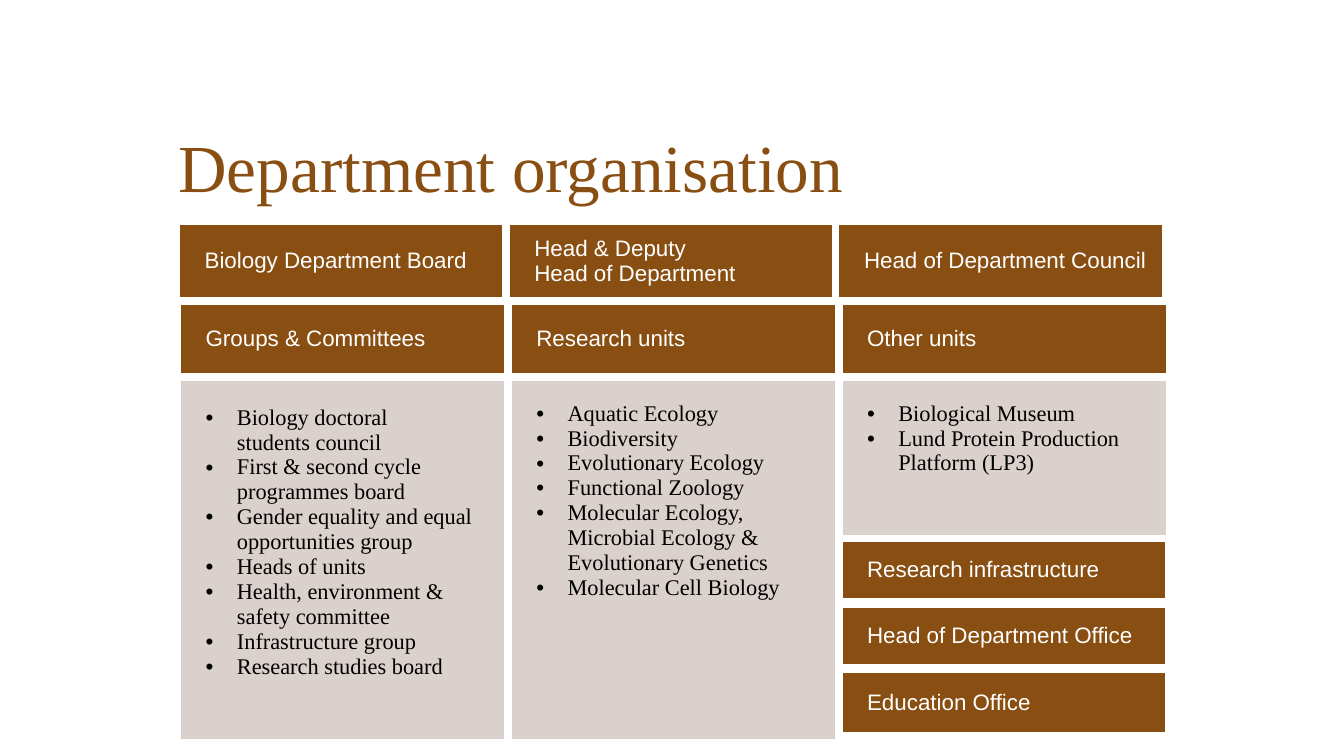
from lxml import etree
from pptx import Presentation
from pptx.dml.color import RGBColor
from pptx.enum import text
from pptx.oxml import ns
from pptx.util import Inches, Pt

BROWN = RGBColor(0x89, 0x4E, 0x11)
BEIGE = RGBColor(0xDA, 0xD0, 0xCC)
WHITE = RGBColor(0xFF, 0xFF, 0xFF)
BLACK = RGBColor(0x00, 0x00, 0x00)
SANS, SERIF = "Arial", "Times New Roman"

LEADERSHIP = ["Biology Department Board", "Head & Deputy \nHead of Department",
              "Head of Department Council"]
UNIT_HEADINGS = ["Groups & Committees", "Research units", "Other units"]
UNIT_LISTS = [
    ["Biology doctoral \nstudents council", "First & second cycle programmes board",
     "Gender equality and equal opportunities group", "Heads of units",
     "Health, environment & safety committee", "Infrastructure group",
     "Research studies board"],
    ["Aquatic Ecology", "Biodiversity", "Evolutionary Ecology", "Functional Zoology",
     "Molecular Ecology, Microbial Ecology & Evolutionary Genetics",
     "Molecular Cell Biology"],
    ["Biological Museum", "Lund Protein Production Platform (LP3)"],
]
LIST_TOP_MARGINS = [0.28, 0.24, 0.24]
OFFICES = [("Research infrastructure", 5.34, 0.63),
           ("Head of Department Office", 5.99, 0.63),
           ("Education Office", 6.64, 0.66)]


def add_text(p, content, size, font, color):
    """Add one run per line, with line breaks between them."""
    for i, line in enumerate(content.split("\n")):
        if i:
            p.add_line_break()
        r = p.add_run()
        r.text = line
        r.font.size = Pt(size)
        r.font.name = font
        r.font.color.rgb = color


def add_bullet(p):
    pPr = p._p.get_or_add_pPr()
    pPr.set("marL", str(Inches(0.31)))
    pPr.set("indent", str(-Inches(0.31)))
    etree.SubElement(pPr, ns.qn("a:buFont"), typeface="Arial")
    etree.SubElement(pPr, ns.qn("a:buChar"), char="•")


def set_borders(cell):
    tcPr = cell._tc.get_or_add_tcPr()
    for i, side in enumerate(("lnL", "lnR", "lnT", "lnB")):
        ln = etree.Element(ns.qn(f"a:{side}"), w=str(Pt(6)))
        fill = etree.SubElement(ln, ns.qn("a:solidFill"))
        etree.SubElement(fill, ns.qn("a:srgbClr"), val=str(WHITE))
        tcPr.insert(i, ln)


def format_cell(cell, color, top=0.05):
    cell.fill.solid()
    cell.fill.fore_color.rgb = color
    cell.margin_left, cell.margin_top = Inches(0.28), Inches(top)
    cell.margin_right, cell.margin_bottom = Inches(0.1), Inches(0.05)
    set_borders(cell)


def fill_heading(cell, heading):
    format_cell(cell, BROWN)
    cell.vertical_anchor = text.MSO_ANCHOR.MIDDLE
    add_text(cell.text_frame.paragraphs[0], heading, 16, SANS, WHITE)


def fill_list(cell, items, top):
    format_cell(cell, BEIGE, top)
    cell.vertical_anchor = text.MSO_ANCHOR.TOP
    tf = cell.text_frame
    for i, item in enumerate(items):
        p = tf.add_paragraph() if i else tf.paragraphs[0]
        add_bullet(p)
        add_text(p, item, 16, SERIF, BLACK)


def add_heading_table(slide, left, top, col_width, row_heights, headings):
    """Add a table whose first row holds the headings, and return it."""
    cols = len(headings)
    table = slide.shapes.add_table(
        len(row_heights), cols, Inches(left), Inches(top),
        Inches(col_width * cols), Inches(sum(row_heights))).table
    table.first_row = table.horz_banding = False
    for column in table.columns:
        column.width = Inches(col_width)
    for row, height in zip(table.rows, row_heights):
        row.height = Inches(height)
    for col, heading in enumerate(headings):
        fill_heading(table.cell(0, col), heading)
    return table


def add_title(slide, title):
    sp = slide.shapes.title
    sp.left, sp.top = Inches(1.77), Inches(0.39)
    sp.width, sp.height = Inches(9.65), Inches(1.97)
    tf = sp.text_frame
    tf.auto_size = text.MSO_AUTO_SIZE.NONE
    tf.word_wrap = True
    tf.vertical_anchor = text.MSO_ANCHOR.BOTTOM
    tf.margin_left = tf.margin_top = tf.margin_right = 0
    tf.margin_bottom = Inches(0.31)
    p = tf.paragraphs[0]
    p.alignment = text.PP_ALIGN.LEFT
    p.line_spacing = 0.9
    add_text(p, title, 48, SERIF, BROWN)


def main():
    prs = Presentation()
    prs.slide_width, prs.slide_height = Inches(13.33), Inches(7.5)
    slide = prs.slides.add_slide(prs.slide_layouts[5])
    add_title(slide, "Department organisation")
    add_heading_table(slide, 1.75, 2.2, 3.27, [0.78], LEADERSHIP)
    units = add_heading_table(slide, 1.76, 2.99, 3.28, [0.75, 3.63], UNIT_HEADINGS)
    for col, (items, top) in enumerate(zip(UNIT_LISTS, LIST_TOP_MARGINS)):
        fill_list(units.cell(1, col), items, top)
    for office, top, height in OFFICES:
        add_heading_table(slide, 8.32, top, 3.27, [height], [office])
    prs.save("out.pptx")


if __name__ == "__main__":
    main()
